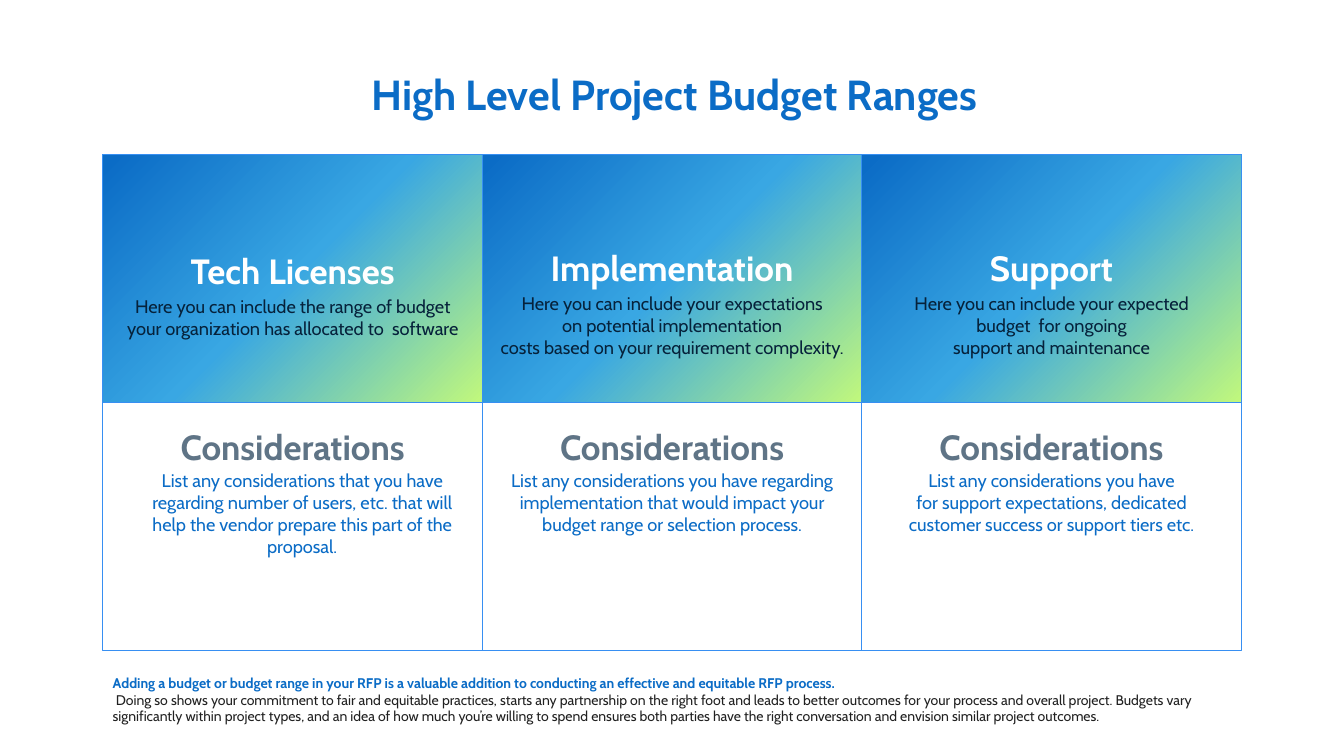
from copy import deepcopy
from dataclasses import dataclass
from typing import Any

from pptx import Presentation
from pptx.dml.color import RGBColor
from pptx.enum.shapes import MSO_SHAPE
from pptx.enum.text import MSO_ANCHOR, MSO_AUTO_SIZE, PP_ALIGN
from pptx.oxml.ns import qn
from pptx.util import Inches, Pt

COLORS = {
    "blue": "0B6CC6",
    "sky": "39A7E3",
    "lime": "C1F87C",
    "border": "378FF2",
    "navy": "06223B",
    "slate": "5F7486",
    "ink": "212121",
    "white": "FFFFFF",
}
GRADIENT = ((0.02, "blue"), (0.5, "sky"), (1, "lime"))

COLUMNS = (
    {
        "heading": "Tech Licenses",
        "summary": (
            "Here you can include the range of budget",
            "your organization has allocated to  software",
        ),
        "drop": 0.03,
        "notes": (
            "List any considerations that you have regarding number of users, etc. "
            "that will help the vendor prepare this part of the proposal.",
        ),
        "notes_inset": (0.27, 0.08),
    },
    {
        "heading": "Implementation",
        "summary": (
            "Here you can include your expectations",
            "on potential implementation",
            "costs based on your requirement complexity.",
        ),
        "drop": 0,
        "notes": (
            "List any considerations you have regarding",
            "implementation that would impact your",
            "budget range or selection process.",
        ),
        "notes_inset": (0.13, 0.13),
    },
    {
        "heading": "Support",
        "summary": (
            "Here you can include your expected",
            "budget  for ongoing",
            "support and maintenance",
        ),
        "drop": 0,
        "notes": (
            "List any considerations you have",
            "for support expectations, dedicated",
            "customer success or support tiers etc.",
        ),
        "notes_inset": (0.23, 0.23),
    },
)


def color(name):
    return RGBColor.from_string(COLORS[name])


def write(paragraph, text, font="Cabin", size=13, fill="navy", bold=False, align=PP_ALIGN.CENTER):
    paragraph.alignment = align
    span = paragraph.add_run()
    span.text = text
    span.font.name = font
    span.font.size = Pt(size)
    span.font.bold = bold
    span.font.color.rgb = color(fill)


@dataclass
class BudgetPage:
    page: Any
    left: float = 1.02
    top: float = 1.53
    column_width: float = 11.29 / 3
    row_height: float = 2.46

    def cell(self, column, row):
        return self.left + column * self.column_width, self.top + row * self.row_height

    def title(self, text):
        box = self.page.shapes.title
        box.left, box.top, box.width, box.height = map(Inches, (2.68, 0.63, 8.02, 0.61))
        frame = box.text_frame
        frame.auto_size = MSO_AUTO_SIZE.NONE
        frame.vertical_anchor = MSO_ANCHOR.MIDDLE
        write(frame.paragraphs[0], text, size=30, fill="blue", bold=True)

    def panel(self, column, row, gradient=False):
        left, top = self.cell(column, row)
        lengths = map(Inches, (left, top, self.column_width, self.row_height))
        box = self.page.shapes.add_shape(MSO_SHAPE.RECTANGLE, *lengths)
        box.shadow.inherit = False
        box.line.color.rgb = color("border")
        box.line.width = Pt(0.5)
        if gradient:
            self.gradient(box)
        else:
            box.fill.background()

    def gradient(self, box):
        box.fill.gradient()
        box.fill.gradient_angle = 315
        stop_list = next(box.element.spPr.iter(qn("a:gsLst")))
        stop_list.append(deepcopy(stop_list[-1]))
        for stop, (position, name) in zip(box.fill.gradient_stops, GRADIENT):
            stop.position = position
            stop.color.rgb = color(name)

    def text(self, left, top, width, height, lines, wrap=True):
        box = self.page.shapes.add_textbox(*map(Inches, (left, top, width, height)))
        frame = box.text_frame
        frame.word_wrap = wrap
        frame.auto_size = MSO_AUTO_SIZE.SHAPE_TO_FIT_TEXT
        for index, (line, style) in enumerate(lines):
            para = frame.add_paragraph() if index else frame.paragraphs[0]
            write(para, line, **style)

    def cell_text(self, column, row, drop, height, lines, inset=(0, 0), wrap=False, **style):
        left, top = self.cell(column, row)
        width = self.column_width - sum(inset)
        styled = [(line, style) for line in lines]
        self.text(left + inset[0], top + drop, width, height, styled, wrap)


def main():
    deck = Presentation()
    deck.slide_width, deck.slide_height = Inches(13.33), Inches(7.5)
    budget = BudgetPage(deck.slides.add_slide(deck.slide_layouts[5]))
    budget.title("High Level Project Budget Ranges")

    for index, column in enumerate(COLUMNS):
        budget.panel(index, 0, gradient=True)
        budget.panel(index, 1)
        summary, notes, drop = column["summary"], column["notes"], column["drop"]
        budget.cell_text(
            index, 0, 0.87 + drop, 0.52, [column["heading"]], size=25, fill="white", bold=True
        )
        budget.cell_text(index, 0, 1.32 + drop, 0.1 + 0.22 * len(summary), summary)
        budget.cell_text(
            index, 1, 0.18, 0.52, ["Considerations"], size=25, fill="slate", bold=True
        )
        budget.cell_text(
            index, 1, 0.62, 0.76 if len(notes) > 1 else 0.98, notes,
            inset=column["notes_inset"], wrap=len(notes) == 1, fill="blue",
        )

    footnote = {"size": 10, "align": PP_ALIGN.LEFT}
    budget.text(1.02, 6.64, 11.3, 0.61, [
        (
            "Adding a budget or budget range in your RFP is a valuable addition to "
            "conducting an effective and equitable RFP process.",
            {**footnote, "fill": "blue", "bold": True},
        ),
        (
            " Doing so shows your commitment to fair and equitable practices, starts any "
            "partnership on the right foot and leads to better outcomes for your process and "
            "overall project. Budgets vary significantly within project types, and an idea of "
            "how much you’re willing to spend ensures both parties have the right conversation "
            "and envision similar project outcomes.",
            {**footnote, "fill": "ink"},
        ),
    ])
    deck.save("out.pptx")


if __name__ == "__main__":
    main()
